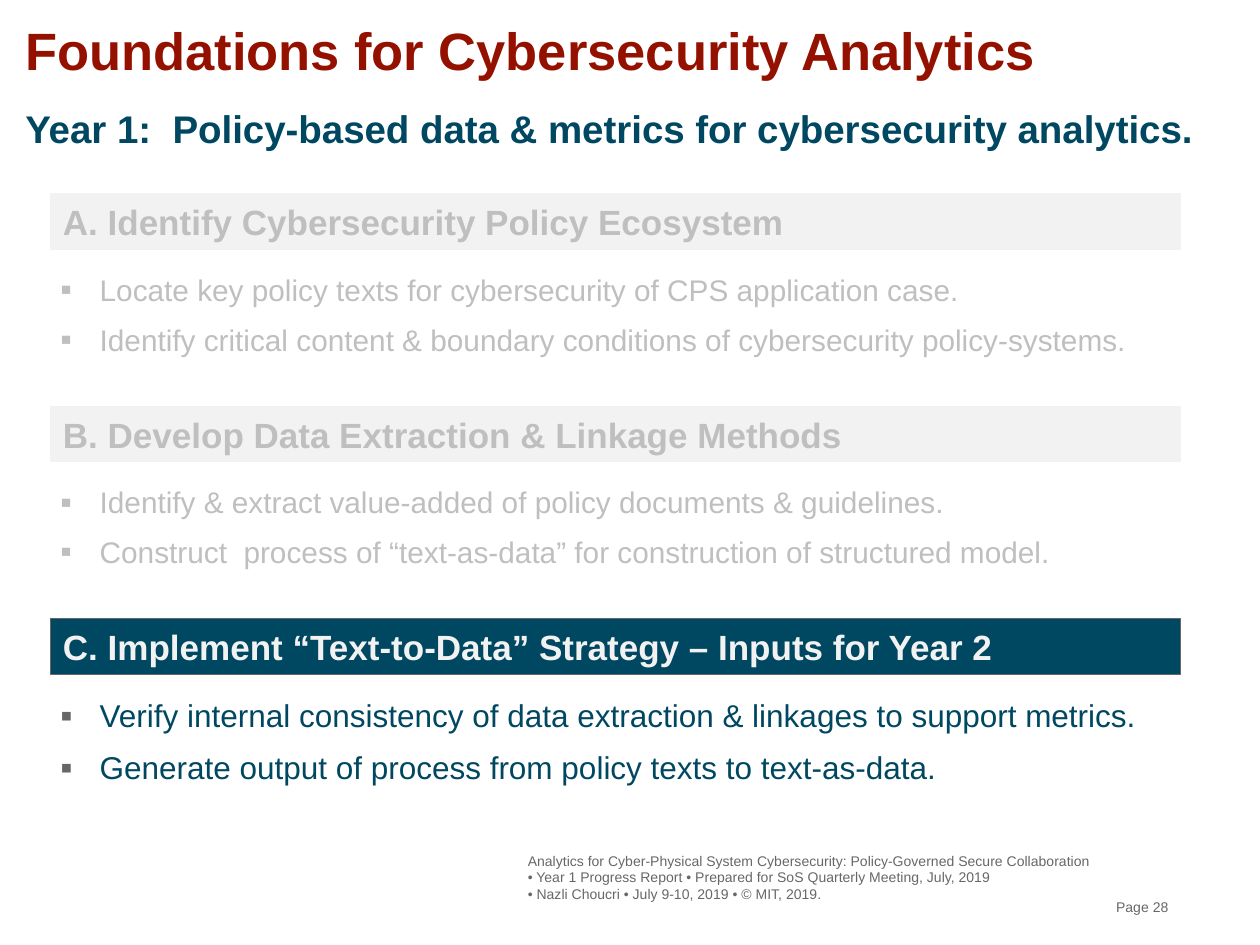
from lxml import etree
from pptx import Presentation
from pptx import util as u
from pptx.dml.color import RGBColor
from pptx.enum import shapes, text
from pptx.oxml.ns import qn

RED = RGBColor(0x94, 0x11, 0x00)
NAVY = RGBColor(0x00, 0x48, 0x62)
GREY = RGBColor(0x67, 0x67, 0x67)
FADED = RGBColor(0xBF, 0xBF, 0xBF)
PALE = RGBColor(0xF2, 0xF2, 0xF2)

SECTION_PITCH = 4.28
BANNER_HEIGHT = 1.12
LIST_OFFSET = 1.37

SECTIONS = [
    ("A. Identify Cybersecurity Policy Ecosystem",
     ["Locate key policy texts for cybersecurity of CPS application case.",
      "Identify critical content & boundary conditions of cybersecurity policy-systems."]),
    ("B. Develop Data Extraction & Linkage Methods",
     ["Identify & extract value-added of policy documents & guidelines.",
      "Construct  process of “text-as-data” for construction of structured model."]),
    ("C. Implement “Text-to-Data” Strategy – Inputs for Year 2",
     ["Verify internal consistency of data extraction & linkages to support metrics.",
      "Generate output of process from policy texts to text-as-data."]),
]
FOOTER = [
    "Analytics for Cyber-Physical System Cybersecurity: Policy-Governed Secure Collaboration",
    "• Year 1 Progress Report • Prepared for SoS Quarterly Meeting, July, 2019",
    "• Nazli Choucri • July 9-10, 2019 • © MIT, 2019.",
]


def place(shape, left, top, width, height):
    shape.left, shape.top = u.Cm(left), u.Cm(top)
    shape.width, shape.height = u.Cm(width), u.Cm(height)


def set_bullet(para, color=None):
    """Give a square bullet in the given colour, or none at all."""
    props = para._p.get_or_add_pPr()
    indent = u.Cm(0.79) if color else 0
    props.set("marL", str(indent))
    props.set("indent", str(-indent))
    if color is None:
        etree.SubElement(props, qn("a:buNone"))
        return
    fill = etree.SubElement(props, qn("a:buClr"))
    etree.SubElement(fill, qn("a:srgbClr"), val=str(color))
    etree.SubElement(props, qn("a:buSzPct"), val="110000")
    etree.SubElement(props, qn("a:buFont"), typeface="Arial")
    etree.SubElement(props, qn("a:buChar"), char="▪")


def write(shape, lines, size, color, bold=False, bullet=None, gap=0,
          insets=(0, 0, 0, 0), anchor=text.MSO_ANCHOR.TOP):
    """Fill a shape with one paragraph per line; insets are left, top, right, bottom in cm."""
    frame = shape.text_frame
    frame.word_wrap = True
    frame.auto_size = text.MSO_AUTO_SIZE.NONE
    frame.vertical_anchor = anchor
    (frame.margin_left, frame.margin_top,
     frame.margin_right, frame.margin_bottom) = map(u.Cm, insets)
    for number, line in enumerate(lines):
        para = frame.add_paragraph() if number else frame.paragraphs[0]
        set_bullet(para, bullet)
        para.alignment = text.PP_ALIGN.LEFT
        para.space_before = u.Pt(gap if number else 0)
        span = para.add_run()
        span.text = line
        span.font.name = "Arial"
        span.font.size = u.Pt(size)
        span.font.bold = bold
        span.font.color.rgb = color


def add_heading(page, left, top, width):
    title, body = page.shapes.title, page.placeholders[1]
    place(title, left, top, width, 1.35)
    write(title, ["Foundations for Cybersecurity Analytics"], 30, RED, bold=True,
          anchor=text.MSO_ANCHOR.BOTTOM)
    place(body, left, top + 1.75, width + 0.51, 1.5)
    write(body, ["Year 1:  Policy-based data & metrics for cybersecurity analytics."],
          22, NAVY, bold=True, insets=(0, 0.09, 0, 0))


def add_section(page, heading, points, left, top, width, current):
    """Add a banner with its bullet list; only the current section is in full colour."""
    group = page.shapes.add_group_shape()
    points_box = group.shapes.add_textbox(
        u.Cm(left), u.Cm(top + LIST_OFFSET), u.Cm(width + 0.61), u.Cm(2.08))
    write(points_box, points, 18 if current else 17, NAVY if current else FADED,
          bullet=GREY if current else FADED, gap=8, insets=(0.2, 0.2, 0.2, 0.2))

    banner = group.shapes.add_shape(
        shapes.MSO_SHAPE.RECTANGLE, u.Cm(left), u.Cm(top), u.Cm(width), u.Cm(BANNER_HEIGHT))
    banner.shadow.inherit = False
    banner.fill.solid()
    banner.fill.fore_color.rgb = NAVY if current else PALE
    banner.line.color.rgb = GREY if current else PALE
    banner.line.width = u.Pt(0.5)
    write(banner, [heading], 20, PALE if current else FADED, bold=True,
          insets=(0.25, 0.2, 0.25, 0.2), anchor=text.MSO_ANCHOR.MIDDLE)


def add_small_print(page, lines, left, top, width):
    box = page.shapes.add_textbox(u.Cm(left), u.Cm(top), u.Cm(width), u.Cm(1.19))
    write(box, lines, 8, GREY, insets=(0.2, 0.1, 0.2, 0.1),
          anchor=text.MSO_ANCHOR.MIDDLE)


def main():
    deck = Presentation()
    deck.slide_width, deck.slide_height = u.Cm(25.4), u.Cm(19.05)
    page = deck.slides.add_slide(deck.slide_layouts[1])
    add_heading(page, 0.51, 0.28, 24.38)
    for number, (heading, points) in enumerate(SECTIONS):
        add_section(page, heading, points, 1.02, 3.91 + number * SECTION_PITCH, 22.78,
                    current=number == len(SECTIONS) - 1)
    add_small_print(page, FOOTER, 10.44, 17.09, 11.76)
    add_small_print(page, ["Page 28"], 22.3, 17.68, 1.73)
    deck.save("out.pptx")


if __name__ == "__main__":
    main()
